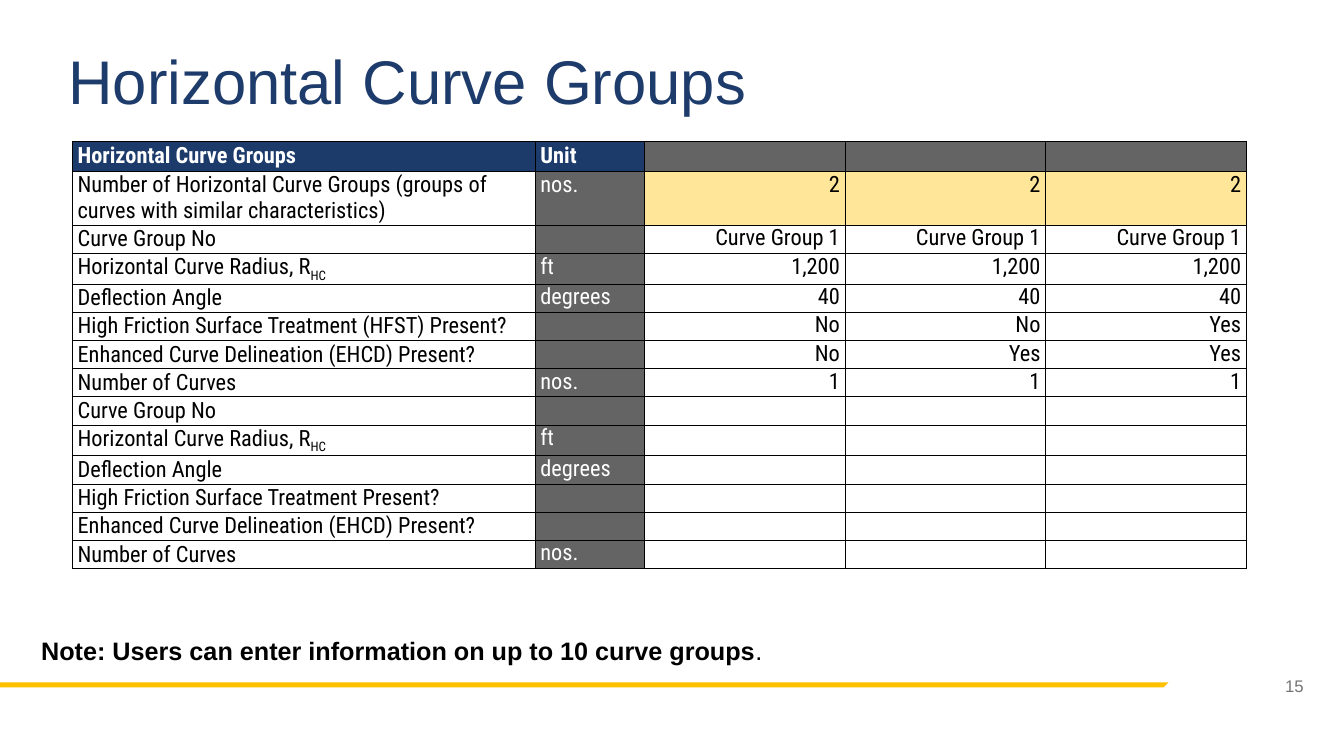
from lxml import etree
from pptx import Presentation
from pptx import util as u
from pptx.dml import color
from pptx.enum import text
from pptx.oxml import ns

HUES = {"navy": "1D3B6B", "head": "1C3B6B", "gray": "646464", "cream": "FFE699",
        "gold": "FFC000", "pale": "757575", "white": "FFFFFF", "black": "000000"}
FACE = "Roboto Condensed"
MID, TOP = text.MSO_ANCHOR.MIDDLE, text.MSO_ANCHOR.TOP
LEFT, RIGHT = text.PP_ALIGN.LEFT, text.PP_ALIGN.RIGHT

WIDTHS = [4.59, 1.08] + [1.99] * 3
HEIGHTS = [0.3, 0.52] + [0.28] * 12
HEAVY = {1, 7, 13}  # rows that close a group with a thicker line
RADIUS = "Horizontal Curve Radius, R|HC"  # the part after the bar is a subscript
BLANK = [""] * 3
ROWS = [
    ["Horizontal Curve Groups", "Unit", *BLANK],
    ["Number of Horizontal Curve Groups (groups of curves with similar characteristics)",
     "nos.", *["2"] * 3],
    ["Curve Group No", "", *["Curve Group 1"] * 3],
    [RADIUS, "ft", *["1,200"] * 3],
    ["Deflection Angle", "degrees", *["40"] * 3],
    ["High Friction Surface Treatment (HFST) Present?", "", "No", "No", "Yes"],
    ["Enhanced Curve Delineation (EHCD) Present?", "", "No", "Yes", "Yes"],
    ["Number of Curves", "nos.", *["1"] * 3],
    ["Curve Group No", "", *BLANK],
    [RADIUS, "ft", *BLANK],
    ["Deflection Angle", "degrees", *BLANK],
    ["High Friction Surface Treatment Present?", "", *BLANK],
    ["Enhanced Curve Delineation (EHCD) Present?", "", *BLANK],
    ["Number of Curves", "nos.", *BLANK],
]


def tint(name):
    return color.RGBColor.from_string(HUES[name])


def paint(fill, name):
    fill.solid()
    fill.fore_color.rgb = tint(name)


def add_run(para, words, hue, size, face="Arial", bold=False):
    run = para.add_run()
    run.text = words
    for key, value in {"size": u.Pt(size), "name": face, "bold": bold}.items():
        setattr(run.font, key, value)
    run.font.color.rgb = tint(hue)
    return run


def add_box(slide, place, anchor=TOP, align=LEFT):
    """Add a wrapped text box and return its first paragraph."""
    frame = slide.shapes.add_textbox(*map(u.Inches, place)).text_frame
    frame.word_wrap = True
    frame.vertical_anchor = anchor
    para = frame.paragraphs[0]
    para.alignment = align
    return para


def add_stripe(slide):
    points = [(u.Inches(x), u.Inches(y)) for x, y in
              [(-0.01, 6.82), (0, 6.77), (11.59, 6.77), (11.54, 6.82)]]
    pen = slide.shapes.build_freeform(*points[0])
    pen.add_line_segments(points[1:], close=True)
    stripe = pen.convert_to_shape()
    stripe.shadow.inherit = False
    paint(stripe.fill, "gold")
    stripe.line.fill.background()


def add_edges(cell, above, below):
    """Draw the four cell borders, with widths in points."""
    props = cell._tc.get_or_add_tcPr()
    sides = {"L": 0.25, "R": 0.25, "T": above, "B": below}
    for spot, (side, width) in enumerate(sides.items()):
        line = etree.Element(ns.qn("a:ln" + side), w=str(u.Pt(width)))
        fill = etree.SubElement(line, ns.qn("a:solidFill"))
        etree.SubElement(fill, ns.qn("a:srgbClr"), val=HUES["black"])
        props.insert(spot, line)


def pick_fill(row, col):
    if row == 0:
        return "head" if col < 2 else "gray"
    if col == 1:
        return "gray"
    return "cream" if row == 1 and col > 1 else "white"


def fill_cell(cell, row, col, words):
    look = {"margin_left": u.Inches(0.05), "margin_right": u.Inches(0.05),
            "margin_top": 0, "margin_bottom": 0,
            "vertical_anchor": MID if col == 0 or row == 0 else TOP}
    for key, value in look.items():
        setattr(cell, key, value)
    paint(cell.fill, pick_fill(row, col))
    add_edges(cell, 1 if row - 1 in HEAVY else 0.25, 1 if row in HEAVY else 0.25)

    para = cell.text_frame.paragraphs[0]
    para.alignment = RIGHT if col > 1 else LEFT
    if not words:
        # An empty cell still needs the text size, or its row grows
        etree.SubElement(para._p, ns.qn("a:endParaRPr"), sz="1600")
        return
    hue = "white" if row == 0 or col == 1 else "black"
    main_part, _, low = words.partition("|")
    add_run(para, main_part, hue, 16, FACE, row == 0)
    if low:
        run = add_run(para, low, hue, 16, FACE)
        run._r.get_or_add_rPr().set("baseline", "-25000")


def add_grid(slide):
    place = map(u.Inches, (0.72, 1.4, sum(WIDTHS), sum(HEIGHTS)))
    table = slide.shapes.add_table(len(ROWS), len(WIDTHS), *place).table
    table.horz_banding = False
    for column, width in zip(table.columns, WIDTHS):
        column.width = u.Inches(width)
    for row, (height, words) in enumerate(zip(HEIGHTS, ROWS)):
        table.rows[row].height = u.Inches(height)
        for col, word in enumerate(words):
            fill_cell(table.cell(row, col), row, col, word)


def main():
    deck = Presentation()
    deck.slide_width, deck.slide_height = u.Inches(13.33), u.Inches(7.5)
    slide = deck.slides.add_slide(deck.slide_layouts[6])

    add_stripe(slide)
    title = add_box(slide, (0.58, 0.28, 11.5, 1.12), MID)
    title.line_spacing = 0.9
    add_run(title, "Horizontal Curve Groups", "navy", 44)
    page = add_box(slide, (12.19, 6.67, 0.84, 0.26), MID, RIGHT)
    add_run(page, "15", "pale", 12)
    note = add_box(slide, (0.31, 6.25, 12.25, 0.51))
    add_run(note, "Note: Users can enter information on up to 10 curve groups",
            "black", 18, bold=True)
    add_run(note, ".", "black", 18)
    add_grid(slide)

    deck.save("out.pptx")


if __name__ == "__main__":
    main()
